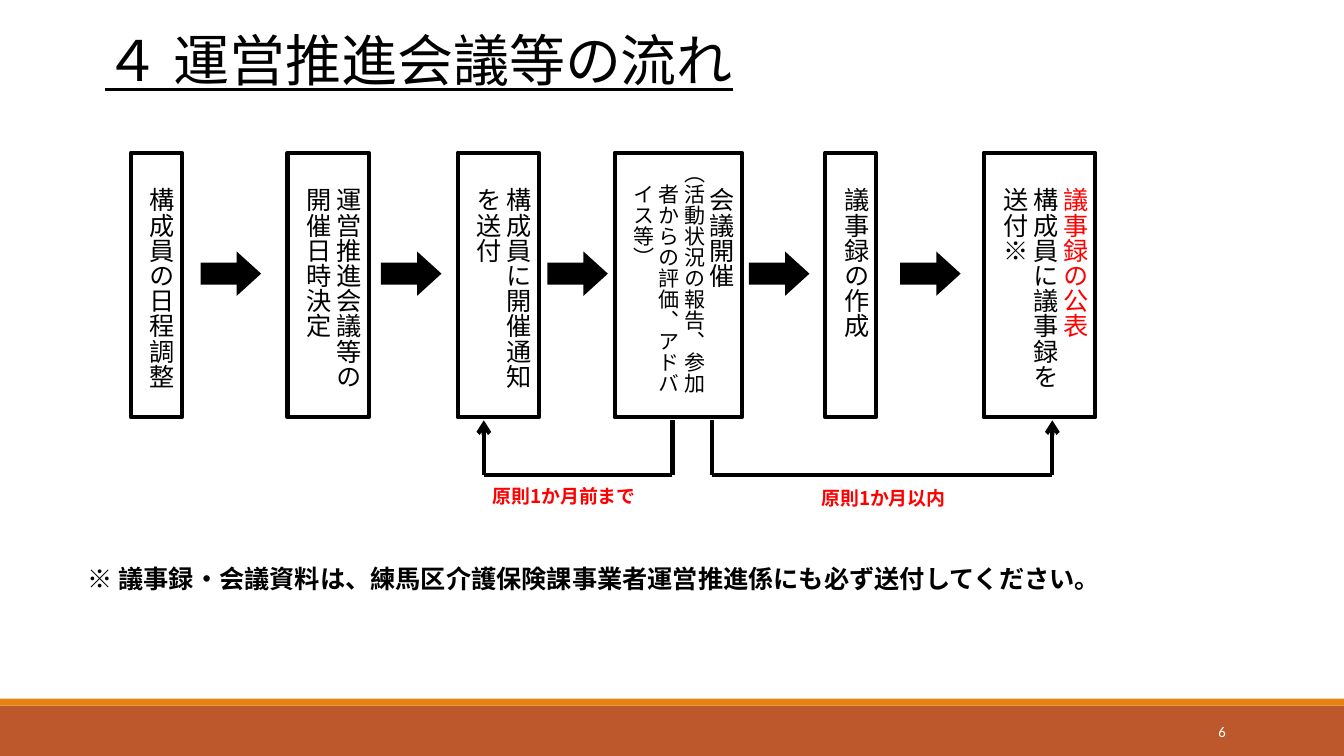
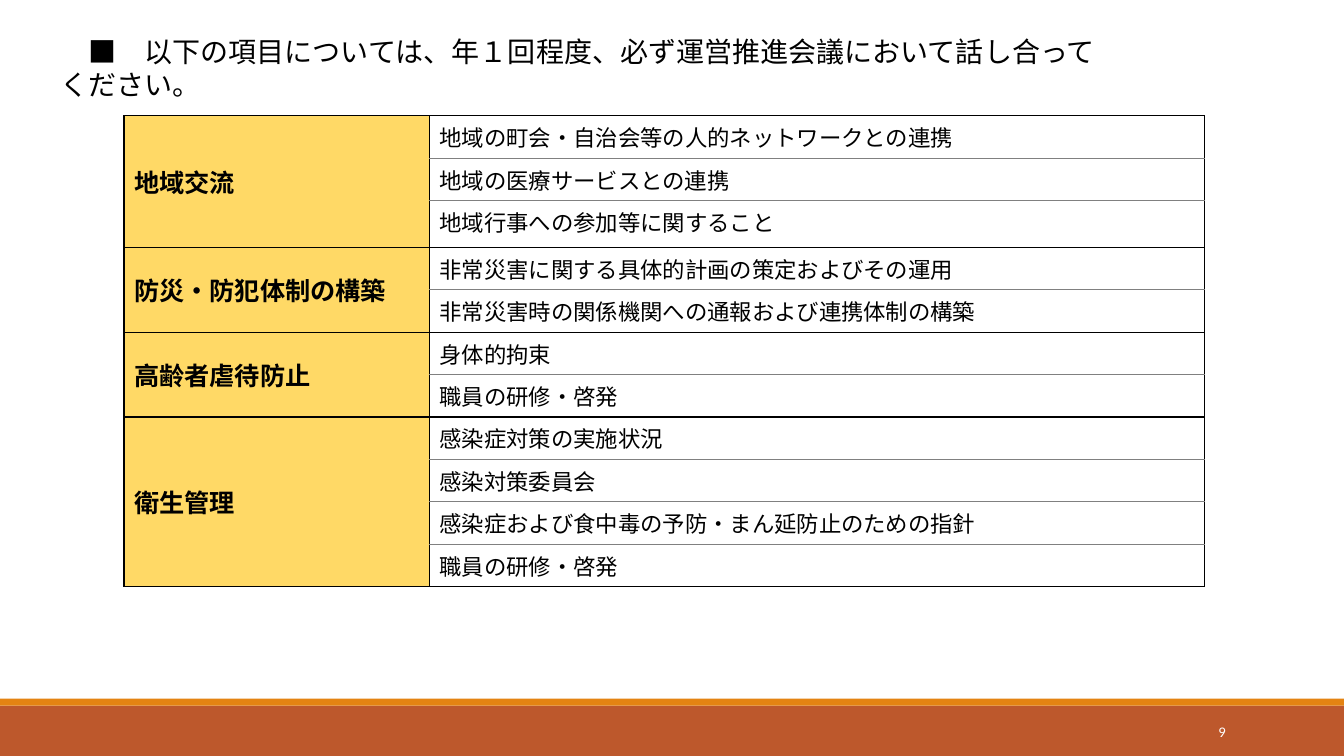
from lxml import etree
from pptx import Presentation
from pptx import util as u
from pptx.dml.color import RGBColor
from pptx.enum import shapes, text
from pptx.oxml import ns

HUES = {
    "ink": "000000", "paper": "FFFFFF", "rust": "BD582C", "amber": "E48312",
    "red": "FF0000", "gold": "FFD966", "grey": "808080",
}
BASE = {"face": "Noto Sans CJK JP", "size": 18, "hue": "ink", "bold": False,
        "underline": False, "align": text.PP_ALIGN.LEFT, "lead": 0}
FRAME = {"word_wrap": True, "auto_size": text.MSO_AUTO_SIZE.NONE,
         "vertical_anchor": text.MSO_ANCHOR.TOP,
         "margin_left": u.Inches(0.1), "margin_right": u.Inches(0.1),
         "margin_top": u.Inches(0.05), "margin_bottom": u.Inches(0.05)}
NOTE = {"size": 13.5, "hue": "red", "bold": True}
SMALL = {"size": 15}

STEPS = [
    (9.75, [("構成員の日程調整", {})]),
    (21.4, [("運営推進会議等の", {}), ("開催日時決定", {})]),
    (34.05, [("構成員に開催通知", {}), ("を送付", {})]),
    (45.75, [("会議開催", {}),
             ("（活動状況の報告、参加", SMALL | {"lead": 0}),
             ("者からの評価、アドバ", SMALL | {"lead": 15}),
             ("イス等）", SMALL | {"lead": 15})]),
    (61.4, [("議事録の作成", {})]),
    (73.2, [("議事録の公表", {"hue": "red"}),
            ("構成員に議事録を", {}), ("送付※", {})]),
]
ARROWS = [14.93, 28.35, 40.73, 55.73, 66.98]
LOOPS = [
    (50.03, 36, (35.93, 63.5, 14, 4.4), "原則1か月前まで"),
    (52.95, 78.3, (60.38, 63.73, 12.8, 4.4), "原則1か月以内"),
]
TOPICS = {
    "地域交流": ["地域の町会・自治会等の人的ネットワークとの連携",
             "地域の医療サービスとの連携", "地域行事への参加等に関すること"],
    "防災・防犯体制の構築": ["非常災害に関する具体的計画の策定およびその運用",
                   "非常災害時の関係機関への通報および連携体制の構築"],
    "高齢者虐待防止": ["身体的拘束", "職員の研修・啓発"],
    "衛生管理": ["感染症対策の実施状況", "感染対策委員会",
             "感染症および食中毒の予防・まん延防止のための指針", "職員の研修・啓発"],
}


def tint(name):
    return RGBColor.from_string(HUES[name])


def apply(thing, values):
    for key, value in values.items():
        setattr(thing, key, value)


class Deck:
    def __init__(self):
        self.show = Presentation()
        self.wide, self.high = u.Inches(13.33), u.Inches(7.5)
        apply(self.show, {"slide_width": self.wide, "slide_height": self.high})

    def x(self, share):
        return round(self.wide * share / 100)

    def y(self, share):
        return round(self.high * share / 100)

    def area(self, box):
        left, top, width, height = box
        return self.x(left), self.y(top), self.x(width), self.y(height)

    def put(self, frame, lines, **style):
        for i, (words, extra) in enumerate(lines):
            look = BASE | style | extra
            para = frame.add_paragraph() if i else frame.paragraphs[0]
            apply(para, {"alignment": look["align"], "line_spacing": 1.0,
                         "space_before": u.Pt(0), "space_after": u.Pt(0)})
            props = para._p.get_or_add_pPr()
            props.set("marL", "0")
            props.set("indent", str(u.Pt(look["lead"])))
            run = para.add_run()
            run.text = words
            apply(run.font, {"name": look["face"], "size": u.Pt(look["size"]),
                             "bold": look["bold"], "underline": look["underline"]})
            run.font.color.rgb = tint(look["hue"])
            east = etree.SubElement(run.font._element, ns.qn("a:ea"))
            east.set("typeface", look["face"])

    def page(self, title, box, number, **style):
        self.slide = self.show.slides.add_slide(self.show.slide_layouts[5])
        self.block((0, 93.33, 100, 6.67), "rust")
        self.block((0, 92.4, 100, 0.93), "amber")
        self.label((81.25, 94.1, 10.7, 5.3), number, face="Calibri", size=10.5,
                   hue="paper", align=text.PP_ALIGN.RIGHT,
                   anchor=text.MSO_ANCHOR.MIDDLE)
        head = self.slide.shapes.title
        apply(head, dict(zip(("left", "top", "width", "height"), self.area(box))))
        apply(head.text_frame, FRAME)
        self.put(head.text_frame, [(title, {})], **style)

    def block(self, box, fill, edge=0, kind=shapes.MSO_SHAPE.RECTANGLE):
        shape = self.slide.shapes.add_shape(kind, *self.area(box))
        shape.shadow.inherit = False
        shape.fill.solid()
        shape.fill.fore_color.rgb = tint(fill)
        if edge:
            shape.line.color.rgb = tint("ink")
            shape.line.width = u.Pt(edge)
        else:
            shape.line.fill.background()
        return shape

    def label(self, box, words, anchor=text.MSO_ANCHOR.TOP, **style):
        frame = self.slide.shapes.add_textbox(*self.area(box)).text_frame
        apply(frame, FRAME | {"vertical_anchor": anchor})
        self.put(frame, [(words, {})], **style)

    def step(self, left, lines):
        sizes = sum(extra.get("size", 18) for _, extra in lines)
        shape = self.block((left, 20.2, 1.5 + 0.126 * sizes, 35), "paper", 3)
        apply(shape.text_frame, FRAME)
        shape.text_frame._txBody.bodyPr.set("vert", "eaVert")
        self.put(shape.text_frame, lines, lead=18)

    def arrow(self, left):
        shape = self.block((left, 33.27, 4.5, 5.87), "ink",
                           kind=shapes.MSO_SHAPE.RIGHT_ARROW)
        shape.adjustments[1] = 0.55

    def line(self, start, end, tip=False):
        link = self.slide.shapes.add_connector(
            shapes.MSO_CONNECTOR.STRAIGHT, self.x(start[0]), self.y(start[1]),
            self.x(end[0]), self.y(end[1]))
        link.line.color.rgb = tint("ink")
        link.line.width = u.Pt(3)
        if tip:
            tail = etree.SubElement(link.line._get_or_add_ln(), ns.qn("a:tailEnd"))
            tail.set("type", "arrow")
        etree.SubElement(link._element.spPr, ns.qn("a:effectLst"))

    def loop(self, start, end, top=55.6, base=62.8):
        spots = [(start, top), (start, base), (end, base), (end, top)]
        for i in range(3):
            self.line(spots[i], spots[i + 1], tip=i == 2)

    def cell(self, cell, words, fill, edges, **style):
        props = cell._tc.get_or_add_tcPr()
        for side, hue in zip("LRTB", edges):
            line = etree.SubElement(props, ns.qn("a:ln" + side), w=str(u.Pt(1)))
            solid = etree.SubElement(line, ns.qn("a:solidFill"))
            etree.SubElement(solid, ns.qn("a:srgbClr"), val=HUES[hue])
        cell.fill.solid()
        cell.fill.fore_color.rgb = tint(fill)
        if words:
            self.put(cell.text_frame, [(words, {})], **style)

    def table(self, spot, cols, row, topics):
        count = sum(map(len, topics.values()))
        box = (*spot, sum(cols), row * count)
        grid = self.slide.shapes.add_table(count, 2, *self.area(box)).table
        apply(grid, {"first_row": False, "horz_banding": False})
        for col, width in zip(grid.columns, cols):
            col.width = self.x(width)
        for band in grid.rows:
            band.height = self.y(row)
        top = 0
        for topic, items in topics.items():
            last = len(items) - 1
            for i, item in enumerate(items):
                self.cell(grid.cell(top + i, 0), "" if i else topic, "gold",
                          ["ink"] * 4, bold=True)
                edges = ["ink", "ink", "grey" if i else "ink",
                         "ink" if i == last else "grey"]
                self.cell(grid.cell(top + i, 1), item, "paper", edges, size=16)
            head = grid.cell(top, 0)
            head.merge(grid.cell(top + last, 0))
            head.vertical_anchor = text.MSO_ANCHOR.MIDDLE
            top += len(items)
        return grid


def main():
    deck = Deck()
    deck.page("４ 運営推進会議等の流れ", (7.05, 2.67, 92.7, 10.27), "6",
              size=40, underline=True)
    for left, lines in STEPS:
        deck.step(left, lines)
    for left in ARROWS:
        deck.arrow(left)
    for start, end, box, words in LOOPS:
        deck.loop(start, end)
        deck.label(box, words, **NOTE)
    deck.label((3.38, 73.87, 81.6, 5.33),
               "※ 議事録・会議資料は、練馬区介護保険課事業者運営推進係にも必ず送付してください。",
               bold=True, align=text.PP_ALIGN.CENTER)

    deck.page("■　以下の項目については、年１回程度、必ず運営推進会議において話し合ってください。",
              (3.75, 3.87, 79.5, 9.73), "9", size=20, lead=20)
    grid = deck.table((9.23, 15.33), (22.73, 57.67), 5.59, TOPICS)
    grid.rows[2].height = deck.y(6.2)
    deck.show.save("out.pptx")


if __name__ == "__main__":
    main()
